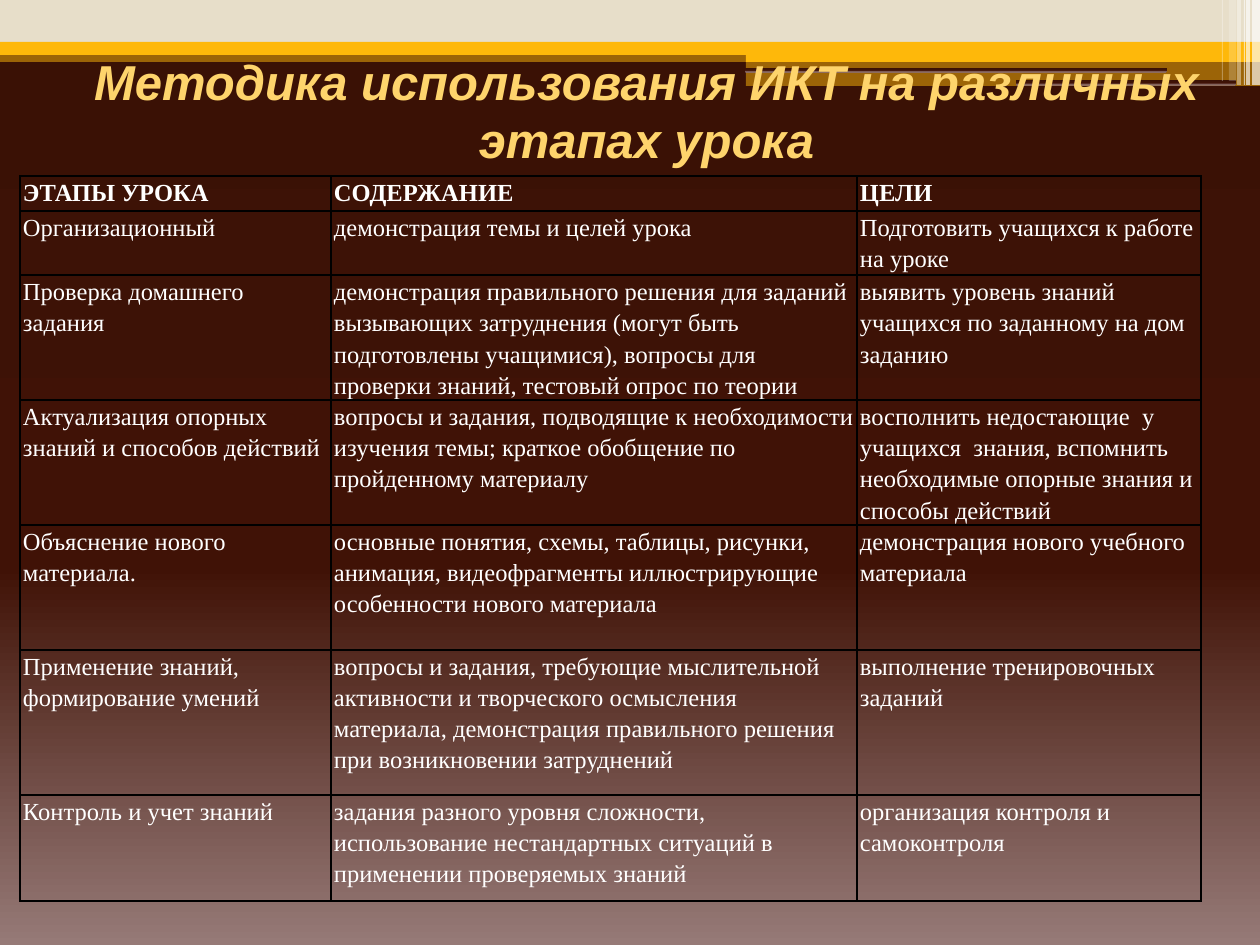
from copy import deepcopy
from dataclasses import dataclass

from lxml import etree
from pptx import Presentation
from pptx import util as u
from pptx.dml.color import RGBColor
from pptx.enum import shapes, text
from pptx.oxml.ns import qn

SCALE = 914400 / 126  # EMU in one px


@dataclass(frozen=True)
class Theme:
    gold: str = "FEB80A"
    sand: str = "E7DEC9"
    white: str = "FFFFFF"
    title: str = "FED46C"
    border: str = "000000"
    gradient: tuple = ((0, "3A1105"), (0.6, "401206"), (1, "967A77"))
    title_font: str = "Arial"
    table_font: str = "Times New Roman"
    title_size: int = 28
    table_size: int = 14


THEME = Theme()

TITLE = "Методика использования ИКТ на различных этапах урока"

# Solid and translucent bands: left, top, width, height, colour, opacity in %
BANDS = [
    (0, 50, 1260, 12, THEME.gold, 50),
    (0, 0, 1260, 42, THEME.sand, 100),
    (0, 42, 1260, 13, THEME.gold, 100),
    (746, 49, 514, 13, THEME.gold, 100),
    (746, 61, 514, 25, THEME.gold, 50),
]
SLOTS = [(745, 68, 422, 4), (1016, 80, 220, 5)]
# Vertical stripes in the corner: left, width, height, opacity in %
STRIPES = [
    (1252, 8, 85, 65), (1246, 4, 85, 65), (1244, 1, 85, 60),
    (1237, 4, 85, 40), (1229, 7, 81, 20), (1222, 1, 81, 30),
]

COLUMNS = [311, 526, 344]
ROWS = [35, 64, 125, 125, 125, 145, 106]
STAGES = [
    ("ЭТАПЫ УРОКА", "СОДЕРЖАНИЕ", "ЦЕЛИ"),
    ("Организационный", "демонстрация темы и целей урока",
     "Подготовить учащихся к работе на уроке"),
    ("Проверка домашнего задания",
     "демонстрация правильного решения для заданий вызывающих затруднения "
     "(могут быть подготовлены учащимися), вопросы для проверки знаний, "
     "тестовый опрос по теории",
     "выявить уровень знаний учащихся по заданному на дом заданию"),
    ("Актуализация опорных знаний и способов действий",
     "вопросы и задания, подводящие к необходимости изучения темы; "
     "краткое обобщение по пройденному материалу",
     "восполнить недостающие  у учащихся  знания, вспомнить "
     "необходимые опорные знания и способы действий"),
    ("Объяснение нового материала.",
     "основные понятия, схемы, таблицы, рисунки, анимация, видеофрагменты "
     "иллюстрирующие особенности нового материала",
     "демонстрация нового учебного материала"),
    ("Применение знаний, формирование умений",
     "вопросы и задания, требующие мыслительной активности и творческого "
     "осмысления материала, демонстрация правильного решения "
     "при возникновении затруднений",
     "выполнение тренировочных заданий"),
    ("Контроль и учет знаний",
     "задания разного уровня сложности, использование нестандартных "
     "ситуаций в применении проверяемых знаний",
     "организация контроля и самоконтроля"),
]


def px(length):
    return u.Emu(round(length * SCALE))


def place(item, left, top, width, height):
    item.left, item.top = px(left), px(top)
    item.width, item.height = px(width), px(height)


def fill_gradient(fill, owner):
    """Fill from top to bottom with the three theme stops."""
    fill.gradient()
    fill.gradient_angle = 270
    stop_list = next(owner.iter(qn("a:gsLst")))
    stop_list.append(deepcopy(stop_list[-1]))
    for stop, (position, colour) in zip(fill.gradient_stops, THEME.gradient):
        stop.position = position
        stop.color.rgb = RGBColor.from_string(colour)


def add_block(page, kind, left, top, width, height):
    block = page.shapes.add_shape(
        kind, px(left), px(top), px(width), px(height))
    block.shadow.inherit = False
    block.line.fill.background()
    return block


def add_band(page, left, top, width, height, colour, opacity):
    band = add_block(page, shapes.MSO_SHAPE.RECTANGLE, left, top, width, height)
    band.fill.solid()
    band.fill.fore_color.rgb = RGBColor.from_string(colour)
    if opacity < 100:
        paint = next(band.element.iter(qn("a:srgbClr")))
        etree.SubElement(paint, qn("a:alpha"), val=str(opacity * 1000))


def add_slot(page, left, top, width, height):
    slot = add_block(
        page, shapes.MSO_SHAPE.ROUNDED_RECTANGLE, left, top, width, height)
    fill_gradient(slot.fill, slot.element)


def style_spans(para, font, size, colour, bold=False, italic=False):
    for span in para.runs:
        span.font.name, span.font.size = font, u.Pt(size)
        span.font.bold, span.font.italic = bold, italic
        span.font.color.rgb = RGBColor.from_string(colour)


def set_title(page):
    title = page.shapes.title
    place(title, 69, 69, 1155, 128)
    frame = title.text_frame
    frame.text = TITLE
    frame.word_wrap = True
    frame.auto_size = text.MSO_AUTO_SIZE.NONE
    frame.vertical_anchor = text.MSO_ANCHOR.MIDDLE
    frame.margin_top, frame.margin_bottom = 0, px(46)
    para = frame.paragraphs[0]
    para.alignment = text.PP_ALIGN.CENTER
    style_spans(para, THEME.title_font, THEME.title_size, THEME.title,
                bold=True, italic=True)
    # Bring the title in front of the bands
    page.shapes.element.append(title.element)


def set_borders(cell):
    properties = cell.fill and cell._tc.get_or_add_tcPr()
    for index, side in enumerate(("lnL", "lnR", "lnT", "lnB")):
        line = etree.Element(qn(f"a:{side}"), w=str(u.Pt(1)))
        paint = etree.SubElement(line, qn("a:solidFill"))
        etree.SubElement(paint, qn("a:srgbClr"), val=THEME.border)
        properties.insert(index, line)


def set_cell(cell, words, bold):
    cell.text = words
    cell.fill.background()
    cell.margin_left = cell.margin_right = px(3)
    cell.margin_top = cell.margin_bottom = 0
    para = cell.text_frame.paragraphs[0]
    para.line_spacing, para.space_after = 1.15, u.Pt(10)
    style_spans(para, THEME.table_font, THEME.table_size, THEME.white, bold)
    set_borders(cell)


def add_stage_table(page, left, top):
    table = page.shapes.add_table(
        len(ROWS), len(COLUMNS), px(left), px(top),
        px(sum(COLUMNS)), px(sum(ROWS))).table
    table.horz_banding = False
    for column, width in zip(table.columns, COLUMNS):
        column.width = px(width)
    for index, (row, height) in enumerate(zip(table.rows, ROWS)):
        row.height = px(height)
        for cell, words in zip(row.cells, STAGES[index]):
            set_cell(cell, words, bold=index == 0)


def main():
    deck = Presentation()
    deck.slide_width, deck.slide_height = px(1260), px(945)
    page = deck.slides.add_slide(deck.slide_layouts[5])
    fill_gradient(page.background.fill, page.element)

    # Decoration along the top
    for band in BANDS:
        add_band(page, *band)
    for slot in SLOTS:
        add_slot(page, *slot)
    for left, width, height, opacity in STRIPES:
        add_band(page, left, 0, width, height, THEME.white, opacity)

    # Content
    set_title(page)
    add_stage_table(page, 20, 176)
    deck.save("out.pptx")


if __name__ == "__main__":
    main()
